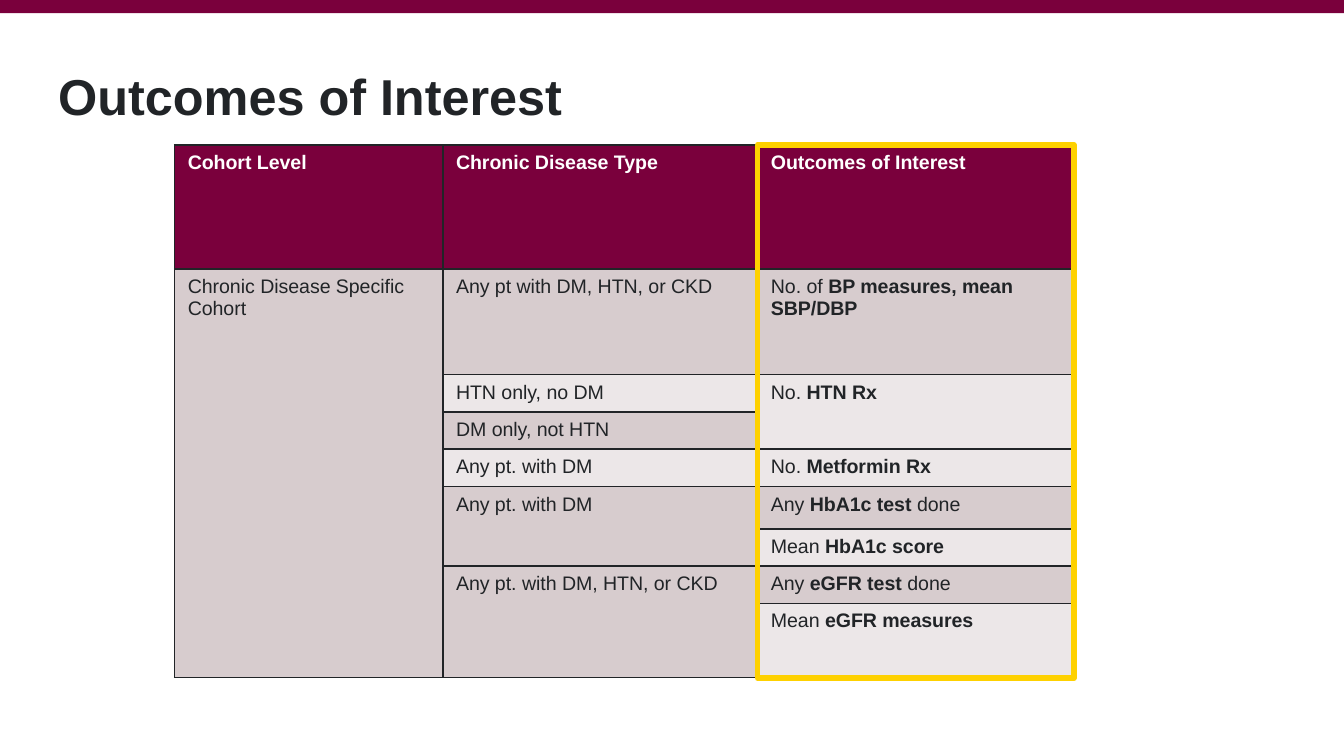
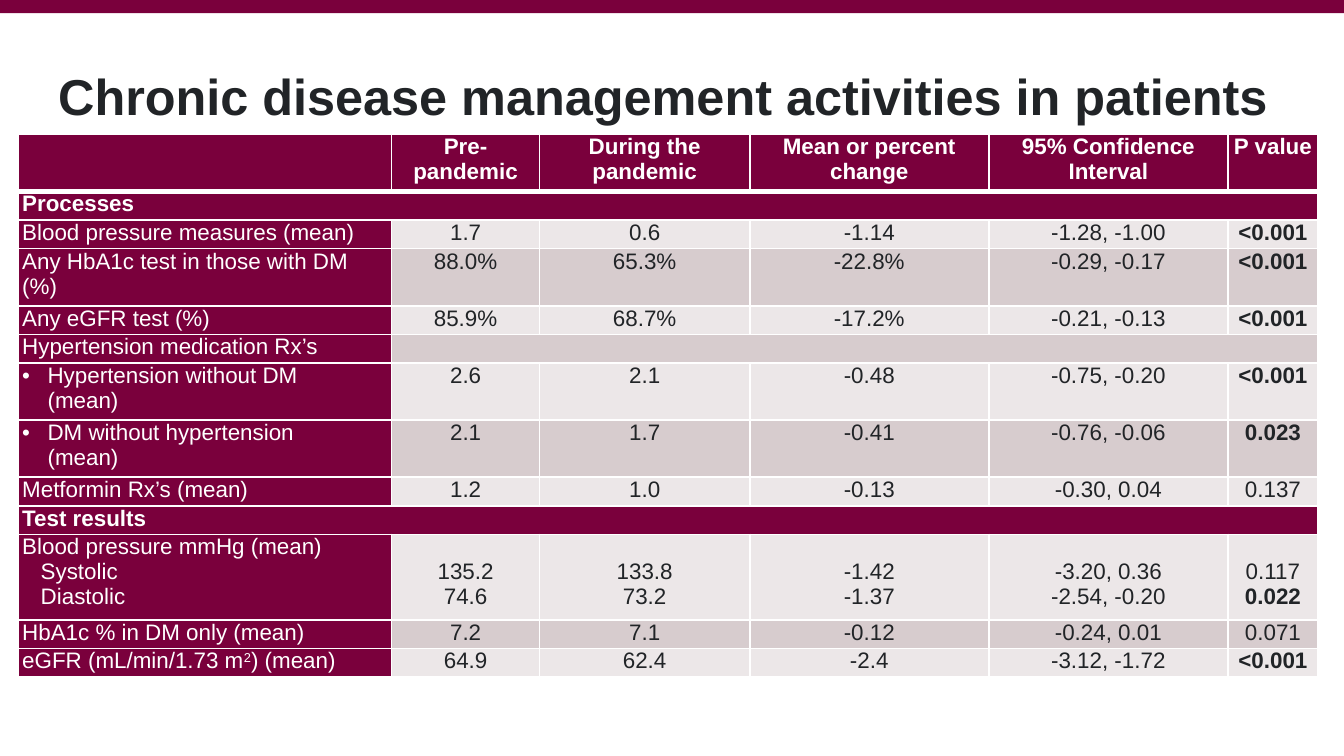
from dataclasses import dataclass

from lxml import etree
from pptx import Presentation
from pptx import util as u
from pptx.dml.color import RGBColor
from pptx.enum import shapes, text
from pptx.oxml import ns

MAROON = RGBColor(0x7A, 0x00, 0x3C)
INK = RGBColor(0x21, 0x24, 0x27)
WHITE = RGBColor(0xFF, 0xFF, 0xFF)
GOLD = RGBColor(0xFE, 0xD1, 0x00)
BANDS = (RGBColor(0xEC, 0xE7, 0xE8), RGBColor(0xD7, 0xCC, 0xCE))
FONT = "Arial"

SLIDE_WIDTH, SLIDE_HEIGHT = 25.4, 14.29

# Cell text marks: *bold*, ^superscript^, \v line break, \n new paragraph,
# a leading bullet for a list item, a leading > for an indented line.
OUTCOME_COLUMNS = (5.07, 5.95, 5.98)
OUTCOME_HEIGHTS = (2.34, 2, 0.68, 0.68, 0.68, 0.8, 0.68, 0.68, 1.4)
OUTCOME_MERGES = ((1, 0, 8, 0), (2, 2, 3, 2), (5, 1, 6, 1), (7, 1, 8, 1))
OUTCOMES = (
    ("*Cohort Level*", "*Chronic Disease Type*", "*Outcomes of Interest*"),
    ("Chronic Disease Specific Cohort", "Any pt with DM, HTN, or CKD",
     "No. of *BP measures, mean SBP/DBP*"),
    ("", "HTN only, no DM", "No. *HTN Rx*"),
    ("", "DM only, not HTN", ""),
    ("", "Any pt. with DM", "No. *Metformin Rx*"),
    ("", "Any pt. with DM", "Any *HbA1c test* done"),
    ("", "", "Mean *HbA1c score*"),
    ("", "Any pt. with DM, HTN, or CKD", "Any *eGFR test* done"),
    ("", "", "Mean *eGFR measures*"),
)

ACTIVITY_COLUMNS = (7.06, 2.8, 3.97, 4.52, 4.52, 1.7)
LINE_ROW = 0.54
ACTIVITY_LINES = (2, 1, 1, 2, 1, 1, 2, 2, 1, 1, 3, 1, 1)
ACTIVITIES = (
    ("", "*Pre-pandemic*", "*During the pandemic*", "*Mean or percent change*",
     "*95% Confidence Interval*", "*P value*"),
    ("*Processes*",),
    ("Blood pressure measures (mean)", "1.7", "0.6", "-1.14", "-1.28, -1.00", "*<0.001*"),
    ("Any HbA1c test in those with DM (%)", "88.0%", "65.3%", "-22.8%",
     "-0.29, -0.17", "*<0.001*"),
    ("Any eGFR test (%)", "85.9%", "68.7%", "-17.2%", "-0.21, -0.13", "*<0.001*"),
    ("Hypertension medication Rx’s", ""),
    ("•Hypertension without DM \v(mean)", "2.6", "2.1", "-0.48", "-0.75, -0.20", "*<0.001*"),
    ("•DM without hypertension \v(mean)", "2.1", "1.7", "-0.41", "-0.76, -0.06", "*0.023*"),
    ("Metformin Rx’s (mean)", "1.2", "1.0", "-0.13", "-0.30, 0.04", "0.137"),
    ("*Test results*",),
    ("Blood pressure mmHg (mean)\n>Systolic\n>Diastolic", "135.2\n74.6", "133.8\n73.2",
     "-1.42\n-1.37", "-3.20, 0.36\n-2.54, -0.20", "0.117\n*0.022*"),
    ("HbA1c % in DM only (mean)", "7.2", "7.1", "-0.12", "-0.24, 0.01", "0.071"),
    ("eGFR (mL/min/1.73 m^2^) (mean)", "64.9", "62.4", "-2.4", "-3.12, -1.72", "*<0.001*"),
)


@dataclass
class TableStyle:
    size: float
    border: RGBColor
    header_rule: float
    side_inset: float
    top_inset: float


OUTCOME_STYLE = TableStyle(10.5, INK, 1, 0.25, 0.13)
ACTIVITY_STYLE = TableStyle(12, WHITE, 3, 0.08, 0)


def add_element(parent, tag, **attributes):
    return etree.SubElement(parent, ns.qn(tag), **attributes)


def format_run(run, size, color, bold=False):
    run.font.name = FONT
    run.font.size = u.Pt(size)
    run.font.color.rgb = color
    run.font.bold = bold


def indent(paragraph, line):
    """Apply the leading mark of a line and return the remaining text."""
    properties = paragraph._p.get_or_add_pPr()
    if line.startswith("•"):
        properties.set("marL", str(u.Cm(0.48)))
        properties.set("indent", str(-u.Cm(0.48)))
        add_element(properties, "a:buFont", typeface=FONT)
        add_element(properties, "a:buChar", char="•")
    elif line.startswith(">"):
        properties.set("marL", str(u.Cm(0.35)))
    return line.lstrip("•>")


def write_line(paragraph, line, size, color):
    line = indent(paragraph, line)
    for bold_index, piece in enumerate(line.split("*")):
        for raised_index, part in enumerate(piece.split("^")):
            for break_index, words in enumerate(part.split("\v")):
                if break_index:
                    paragraph.add_line_break()
                if words:
                    run = paragraph.add_run()
                    run.text = words
                    format_run(run, size, color, bold_index % 2 == 1)
                    if raised_index % 2:
                        run.font._element.set("baseline", "30000")
    points = str(int(size * 100))
    for line_break in paragraph._p.findall(ns.qn("a:br")):
        add_element(line_break, "a:rPr", sz=points)
    if not line:
        add_element(paragraph._p, "a:endParaRPr", sz=points)


def write_cell(cell, content, style, color, alignment):
    cell.margin_left = cell.margin_right = u.Cm(style.side_inset)
    cell.margin_top = cell.margin_bottom = u.Cm(style.top_inset)
    frame = cell.text_frame
    for index, line in enumerate(content.split("\n")):
        paragraph = frame.add_paragraph() if index else frame.paragraphs[0]
        paragraph.alignment = alignment
        write_line(paragraph, line, style.size, color)


def paint_cell(cell, fill, style, row):
    properties = cell._tc.get_or_add_tcPr()
    widths = {"L": 1, "R": 1,
              "T": style.header_rule if row == 1 else 1,
              "B": style.header_rule if row == 0 else 1}
    for side, width in widths.items():
        line = add_element(properties, f"a:ln{side}", w=str(u.Pt(width)))
        solid = add_element(line, "a:solidFill")
        add_element(solid, "a:srgbClr", val=str(style.border))
    cell.fill.solid()
    cell.fill.fore_color.rgb = fill


def add_grid(slide, left, top, columns, heights):
    frame = slide.shapes.add_table(
        len(heights), len(columns), u.Cm(left), u.Cm(top),
        u.Cm(sum(columns)), u.Cm(sum(heights)))
    table = frame.table
    table.first_row = table.horz_banding = False
    for column, width in zip(table.columns, columns):
        column.width = u.Cm(width)
    for row, height in zip(table.rows, heights):
        row.height = u.Cm(height)
    return table


def add_page(presentation, title):
    slide = presentation.slides.add_slide(presentation.slide_layouts[6])
    # Top band
    band = slide.shapes.add_shape(
        shapes.MSO_SHAPE.RECTANGLE, 0, 0, u.Cm(SLIDE_WIDTH), u.Cm(0.25))
    band.shadow.inherit = False
    band.fill.solid()
    band.fill.fore_color.rgb = MAROON
    band.line.fill.background()
    # Title
    box = slide.shapes.add_textbox(u.Cm(0.85), u.Cm(0.38), u.Cm(23.57), u.Cm(2.84))
    frame = box.text_frame
    frame.word_wrap = True
    frame.vertical_anchor = text.MSO_ANCHOR.MIDDLE
    frame.text = title
    format_run(frame.paragraphs[0].runs[0], 27, INK, True)
    return slide


def add_outcome_table(slide, left, top):
    table = add_grid(slide, left, top, OUTCOME_COLUMNS, OUTCOME_HEIGHTS)
    for row, contents in enumerate(OUTCOMES):
        for column, content in enumerate(contents):
            cell = table.cell(row, column)
            header = row == 0
            write_cell(cell, content, OUTCOME_STYLE, WHITE if header else INK,
                       text.PP_ALIGN.LEFT)
            paint_cell(cell, MAROON if header else BANDS[row % 2], OUTCOME_STYLE, row)
    for first_row, first_column, last_row, last_column in OUTCOME_MERGES:
        table.cell(first_row, first_column).merge(table.cell(last_row, last_column))

    # Frame around the last column
    highlight = slide.shapes.add_shape(
        shapes.MSO_SHAPE.RECTANGLE, u.Cm(left + sum(OUTCOME_COLUMNS[:2])), u.Cm(top),
        u.Cm(OUTCOME_COLUMNS[2]), u.Cm(10.08))
    highlight.shadow.inherit = False
    highlight.fill.background()
    highlight.line.color.rgb = GOLD
    highlight.line.width = u.Pt(3)
    add_element(highlight._element.spPr.find(ns.qn("a:ln")), "a:round")


def add_activity_table(slide, left, top):
    heights = [lines * LINE_ROW for lines in ACTIVITY_LINES]
    table = add_grid(slide, left, top, ACTIVITY_COLUMNS, heights)
    last = len(ACTIVITY_COLUMNS) - 1
    for row, contents in enumerate(ACTIVITIES):
        section = len(contents) == 1
        for column in range(last + 1):
            cell = table.cell(row, column)
            content = contents[column] if column < len(contents) else ""
            dark = row == 0 or column == 0 or section
            write_cell(cell, content, ACTIVITY_STYLE, WHITE if dark else INK,
                       text.PP_ALIGN.CENTER if column else text.PP_ALIGN.LEFT)
            if column and "\n" in content:
                # Values line up with the second line of the label
                cell.margin_top = u.Cm(0.47)
            paint_cell(cell, MAROON if dark else BANDS[row % 2], ACTIVITY_STYLE, row)
        if len(contents) <= last:
            table.cell(row, len(contents) - 1).merge(table.cell(row, last))


def main():
    presentation = Presentation()
    presentation.slide_width = u.Cm(SLIDE_WIDTH)
    presentation.slide_height = u.Cm(SLIDE_HEIGHT)
    slide = add_page(presentation, "Outcomes of Interest")
    add_outcome_table(slide, 3.3, 2.74)
    slide = add_page(presentation, "Chronic disease management activities in patients")
    add_activity_table(slide, 0.34, 2.54)
    presentation.save("out.pptx")


if __name__ == "__main__":
    main()
